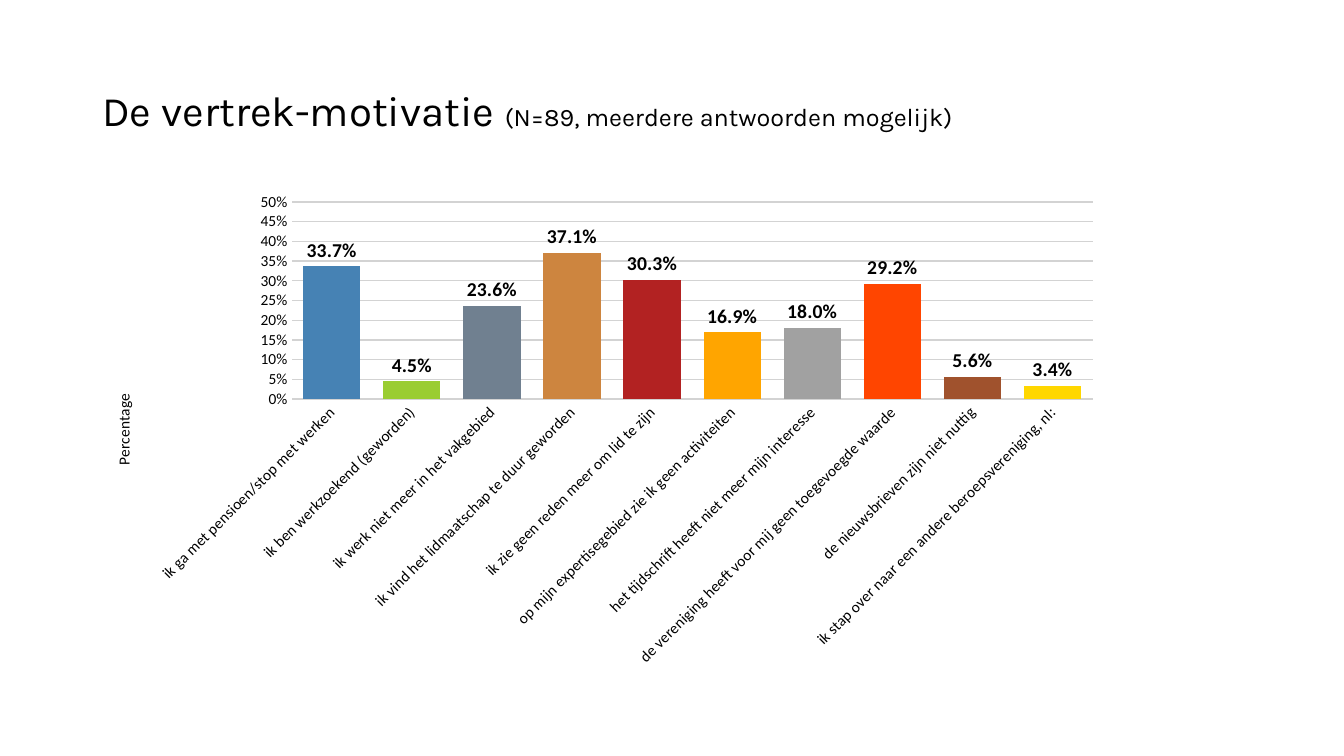
from pptx import Presentation
from pptx.chart.data import CategoryChartData
from pptx.dml.color import RGBColor
from pptx.enum.chart import XL_CHART_TYPE, XL_LABEL_POSITION, XL_TICK_MARK
from pptx.enum.text import MSO_ANCHOR
from pptx.util import Pt

PX = 9525
INK = {"text": "000000", "grid": "D3D3D3"}
BARS = [
    ("ik ga met pensioen/stop met werken", 0.337, "4682B4"),
    ("ik ben werkzoekend (geworden)", 0.045, "9ACD32"),
    ("ik werk niet meer in het vakgebied", 0.236, "708090"),
    ("ik vind het lidmaatschap te duur geworden", 0.371, "CD853F"),
    ("ik zie geen reden meer om lid te zijn", 0.303, "B22222"),
    ("op mijn expertisegebied zie ik geen activiteiten", 0.169, "FFA500"),
    ("het tijdschrift heeft niet meer mijn interesse", 0.18, "A1A1A1"),
    ("de vereniging heeft voor mij geen toegevoegde waarde", 0.292, "FF4500"),
    ("de nieuwsbrieven zijn niet nuttig", 0.056, "A0522D"),
    ("ik stap over naar een andere beroepsvereniging, nl:", 0.034, "FFD700"),
]


def style(font, name, size, bold=False):
    """Set the face, size, weight and text colour of a font."""
    font.name, font.size, font.bold = name, Pt(size), bold
    font.color.rgb = RGBColor.from_string(INK["text"])


def add_title(slide, box):
    """Write the heading with its smaller sample note."""
    frame = slide.shapes.add_textbox(*(n * PX for n in box)).text_frame
    frame.word_wrap = True
    frame.vertical_anchor = MSO_ANCHOR.MIDDLE
    para = frame.paragraphs[0]
    para.line_spacing = 0.9
    for text, size in [("De vertrek-motivatie ", 30),
                       ("(N=89, meerdere antwoorden mogelijk)", 18)]:
        run = para.add_run()
        run.text = text
        style(run.font, "Karla", size)


def set_axes(chart):
    """Format the slanted categories and the percentage scale."""
    for axis in (chart.category_axis, chart.value_axis):
        axis.major_tick_mark = XL_TICK_MARK.INSIDE
        axis.minor_tick_mark = XL_TICK_MARK.NONE
        axis.format.line.fill.background()
        style(axis.tick_labels.font, "Calibri", 11)
    props = chart.category_axis._element.find("{*}txPr/{*}bodyPr")
    props.set("rot", str(-45 * 60000))
    scale = chart.value_axis
    scale.minimum_scale, scale.maximum_scale = 0, 0.5
    scale.major_unit = 0.05
    scale.tick_labels.number_format = "0%"
    scale.tick_labels.number_format_is_linked = False
    grid = scale.major_gridlines.format.line
    grid.width = Pt(1)
    grid.color.rgb = RGBColor.from_string(INK["grid"])
    run = scale.axis_title.text_frame.paragraphs[0].add_run()
    run.text = "Percentage"
    style(run.font, "Calibri", 11)


def add_bars(slide, box):
    """Chart the reasons for leaving, one colour per bar."""
    data = CategoryChartData(number_format="0.0%")
    data.categories = [name for name, _, _ in BARS]
    data.add_series("Series 1", [share for _, share, _ in BARS])
    chart = slide.shapes.add_chart(
        XL_CHART_TYPE.COLUMN_CLUSTERED, *(n * PX for n in box), data).chart
    chart.has_title = chart.has_legend = False
    style(chart.font, "Calibri", 11)
    set_axes(chart)
    plot = chart.plots[0]
    plot.gap_width = 40
    plot.vary_by_categories = False
    series = plot.series[0]
    series.invert_if_negative = False
    for i, (_, _, color) in enumerate(BARS):
        fill = series.points[i].format.fill
        fill.solid()
        fill.fore_color.rgb = RGBColor.from_string(color)
    labels = series.data_labels
    labels.show_value = True
    labels.position = XL_LABEL_POSITION.OUTSIDE_END
    labels.number_format = "0.0%"
    labels.number_format_is_linked = False
    style(labels.font, "Calibri", 14, True)


def main():
    """Build and save the slide."""
    deck = Presentation()
    deck.slide_width, deck.slide_height = 1280 * PX, 720 * PX
    slide = deck.slides.add_slide(deck.slide_layouts[6])
    add_title(slide, (88, 38, 1104, 139))
    add_bars(slide, (88, 174, 972, 470))
    deck.save("out.pptx")


if __name__ == "__main__":
    main()
